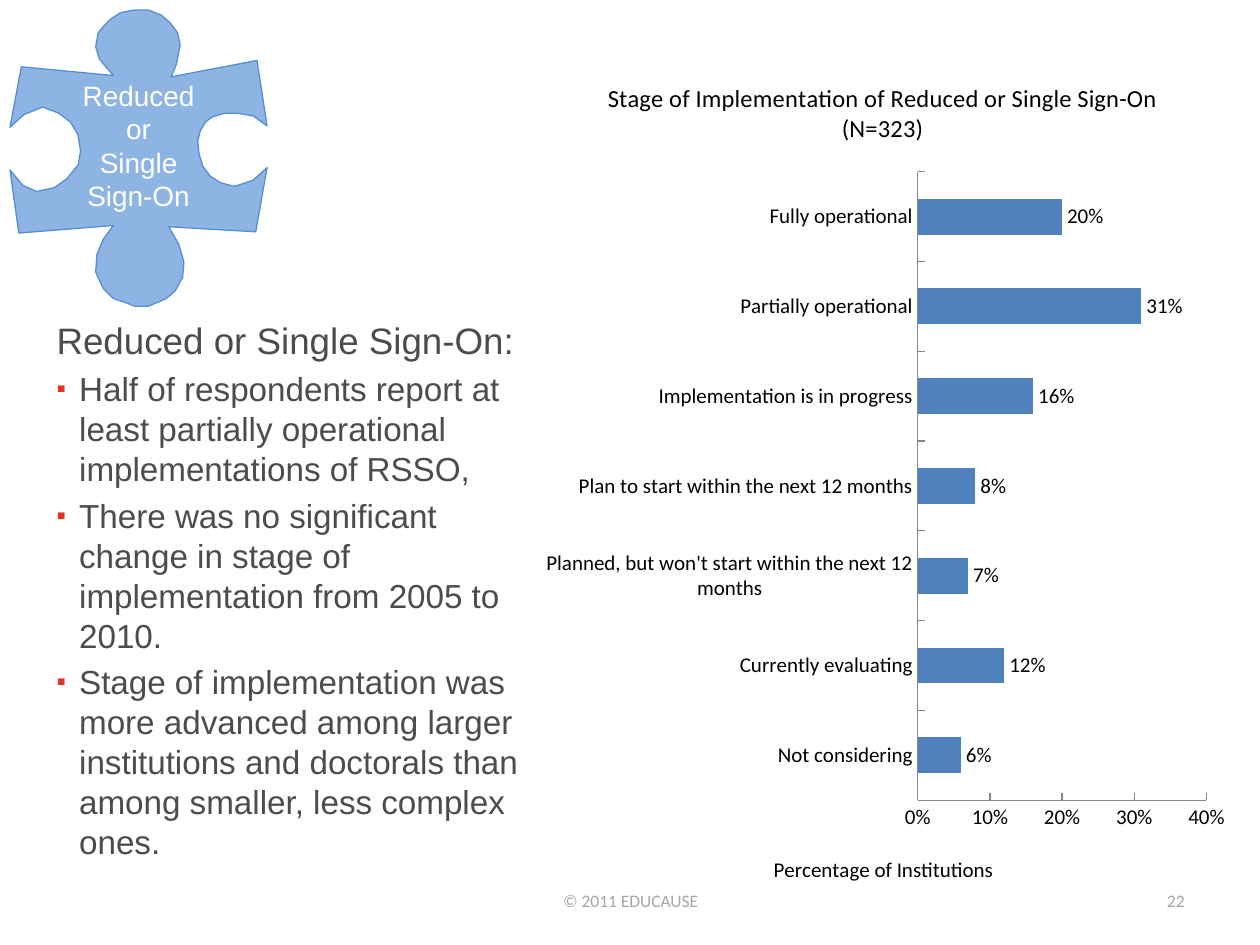
import pptx
import pptx.chart.data
import pptx.dml.color
import pptx.enum.chart
import pptx.enum.text
import pptx.oxml
import pptx.oxml.ns
import pptx.util

Inches = pptx.util.Inches
Pt = pptx.util.Pt
ALIGN = pptx.enum.text.PP_ALIGN
ANCHOR = pptx.enum.text.MSO_ANCHOR
TICK = pptx.enum.chart.XL_TICK_MARK

COLORS = {
    "piece": "8EB4E3", "piece_line": "558ED5", "white": "FFFFFF",
    "body": "4C4C4F", "bullet": "E33323", "black": "000000",
    "bar": "4F81BD", "axis": "868686", "footer": "A6A6A6",
}

PIECE_POINTS = [
    (0.9, 0.6), (0.17, 0.53), (0.08, 1.01), (0.19, 0.91), (0.34, 0.85), (0.47, 0.9),
    (0.56, 0.97), (0.62, 1.07), (0.64, 1.2), (0.62, 1.31), (0.53, 1.42), (0.43, 1.49),
    (0.29, 1.52), (0.18, 1.47), (0.08, 1.35), (0.15, 1.85), (0.9, 1.79), (0.82, 1.9),
    (0.77, 2.02), (0.76, 2.16), (0.82, 2.29), (0.9, 2.37), (0.99, 2.4), (1.07, 2.43),
    (1.18, 2.43), (1.32, 2.37), (1.39, 2.31), (1.45, 2.2), (1.46, 2.08), (1.42, 1.94),
    (1.34, 1.8), (2.03, 1.84), (2.12, 1.33), (2.01, 1.43), (1.86, 1.48), (1.75, 1.45),
    (1.67, 1.4), (1.61, 1.32), (1.58, 1.22), (1.57, 1.12), (1.59, 1.04), (1.63, 0.97),
    (1.68, 0.93), (1.78, 0.9), (1.89, 0.9), (2.01, 0.92), (2.12, 1), (2.04, 0.48),
    (1.36, 0.61), (1.4, 0.51), (1.43, 0.36), (1.41, 0.26), (1.35, 0.18), (1.28, 0.12),
    (1.18, 0.08), (1.06, 0.08), (0.96, 0.1), (0.88, 0.15), (0.83, 0.2), (0.78, 0.26),
    (0.76, 0.37), (0.79, 0.47),
]

FINDINGS = [
    "Half of respondents report at least partially operational implementations of RSSO,",
    "There was no significant change in stage of implementation from 2005 to 2010.",
    "Stage of implementation was more advanced among larger institutions and doctorals "
    "than among smaller, less complex ones.",
]

STAGES = {
    "Not considering": 0.06,
    "Currently evaluating": 0.12,
    "Planned, but won't start within the next 12 months": 0.07,
    "Plan to start within the next 12 months": 0.08,
    "Implementation is in progress": 0.16,
    "Partially operational": 0.31,
    "Fully operational": 0.2,
}


def rgb(name):
    return pptx.dml.color.RGBColor.from_string(COLORS[name])


def set_font(font, size, color="black", name="Calibri"):
    font.size = Pt(size)
    font.name = name
    font.bold = False
    font.color.rgb = rgb(color)


def write_text(frame, text, size=12, color="black", name="Calibri", align=ALIGN.LEFT,
               bullet=False, hanging=0, before=0, new=False):
    paragraph = frame.add_paragraph() if new else frame.paragraphs[0]
    paragraph.alignment = align
    if before:
        paragraph.space_before = Pt(before)
    properties = paragraph._p.get_or_add_pPr()
    if hanging:
        properties.set("marL", str(Inches(hanging)))
        properties.set("indent", str(-Inches(hanging)))
    if bullet:
        namespace = pptx.oxml.ns.nsdecls("a")
        for xml in (
            f'<a:buClr {namespace}><a:srgbClr val="{COLORS["bullet"]}"/></a:buClr>',
            f'<a:buSzPct {namespace} val="80000"/>',
            f'<a:buFont {namespace} typeface="Arial"/>',
            f'<a:buChar {namespace} char="▪"/>',
        ):
            properties.append(pptx.oxml.parse_xml(xml))
    run = paragraph.add_run()
    run.text = text
    set_font(run.font, size, color, name)


def place(parent, left, top, width=None, height=None):
    sizes = "" if width is None else f'<c:w val="{width}"/><c:h val="{height}"/>'
    target = "" if width is None else '<c:layoutTarget val="inner"/>'
    layout = pptx.oxml.parse_xml(
        f'<c:layout {pptx.oxml.ns.nsdecls("c")}><c:manualLayout>{target}'
        f'<c:xMode val="edge"/><c:yMode val="edge"/>'
        f'<c:x val="{left}"/><c:y val="{top}"/>{sizes}</c:manualLayout></c:layout>')
    for old in parent.findall(pptx.oxml.ns.qn("c:layout")):
        parent.remove(old)
    text = parent.find(pptx.oxml.ns.qn("c:tx"))
    parent.insert(0 if text is None else parent.index(text) + 1, layout)


class SlideBuilder:
    def __init__(self, slide):
        self.slide = slide

    def group(self):
        return self.slide.shapes.add_group_shape()

    def outline(self, shapes, points):
        start, *rest = [(Inches(x), Inches(y)) for x, y in points]
        builder = shapes.build_freeform(*start, scale=1.0)
        builder.add_line_segments(rest, close=True)
        shape = builder.convert_to_shape()
        shape.shadow.inherit = False
        shape.fill.solid()
        shape.fill.fore_color.rgb = rgb("piece")
        shape.line.color.rgb = rgb("piece_line")
        shape.line.width = Pt(0.75)

    def text(self, box, paragraphs, shapes=None, wrap=True, anchor=ANCHOR.TOP, **style):
        shapes = shapes or self.slide.shapes
        frame = shapes.add_textbox(*map(Inches, box)).text_frame
        frame.word_wrap = wrap
        frame.vertical_anchor = anchor
        for index, text in enumerate(paragraphs):
            write_text(frame, text, new=index > 0, **style)
        return frame

    def bar_chart(self, box, values, title, axis_title):
        data = pptx.chart.data.CategoryChartData(number_format="0%")
        data.categories = list(values)
        data.add_series("Series 1", list(values.values()))
        chart = self.slide.shapes.add_chart(
            pptx.enum.chart.XL_CHART_TYPE.BAR_CLUSTERED, *map(Inches, box), data).chart
        set_font(chart.font, 18)
        chart.has_legend = False
        chart.has_title = True
        write_text(chart.chart_title.text_frame, title, size=14, align=ALIGN.CENTER)
        chart.chart_title.include_in_layout = False

        for axis in (chart.category_axis, chart.value_axis):
            axis.has_major_gridlines = False
            axis.major_tick_mark = TICK.INSIDE
            axis.minor_tick_mark = TICK.NONE
            axis.format.line.color.rgb = rgb("axis")
            set_font(axis.tick_labels.font, 12)
        axis = chart.value_axis
        axis.minimum_scale, axis.maximum_scale, axis.major_unit = 0, 0.4, 0.1
        axis.tick_labels.number_format = "0%"
        axis.tick_labels.number_format_is_linked = False
        write_text(axis.axis_title.text_frame, axis_title, align=ALIGN.CENTER)
        place(axis.axis_title._element, 0.34, 0.94)

        plot = chart.plots[0]
        plot.gap_width = 150
        plot.vary_by_categories = False
        series = plot.series[0]
        series.format.fill.solid()
        series.format.fill.fore_color.rgb = rgb("bar")
        labels = series.data_labels
        labels.show_value = True
        labels.number_format = "0%"
        labels.number_format_is_linked = False
        labels.position = pptx.enum.chart.XL_LABEL_POSITION.OUTSIDE_END
        set_font(labels.font, 12)
        place(chart._chartSpace.chart.plotArea, 0.55, 0.14, 0.41, 0.74)


def main():
    presentation = pptx.Presentation()
    presentation.slide_width = Inches(10)
    presentation.slide_height = Inches(7.5)
    builder = SlideBuilder(presentation.slides.add_slide(presentation.slide_layouts[6]))

    piece = builder.group()
    builder.outline(piece.shapes, PIECE_POINTS)
    builder.text((0.55, 0.57, 1.1, 1.18), ["Reduced", "or", "Single", "Sign-On"],
                 shapes=piece.shapes, wrap=False, size=16, color="white", name="Arial",
                 align=ALIGN.CENTER)

    body = {"color": "body", "name": "Arial", "hanging": 0.18}
    frame = builder.text((0.35, 2.47, 4.12, 4.86), ["Reduced or Single Sign-On:"],
                         size=21, **body)
    for finding in FINDINGS:
        write_text(frame, finding, size=19, bullet=True, before=4, new=True, **body)

    builder.bar_chart((4.21, 0.42, 5.59, 6.74), STAGES,
                      "Stage of Implementation of Reduced or Single Sign-On (N=323)",
                      "Percentage of Institutions")

    footer = {"size": 10, "color": "footer", "anchor": ANCHOR.MIDDLE}
    builder.text((7.17, 6.95, 2.33, 0.4), ["22"], align=ALIGN.RIGHT, **footer)
    builder.text((3.42, 6.95, 3.17, 0.4), ["© 2011 EDUCAUSE"], align=ALIGN.CENTER, **footer)

    presentation.save("out.pptx")


if __name__ == "__main__":
    main()
